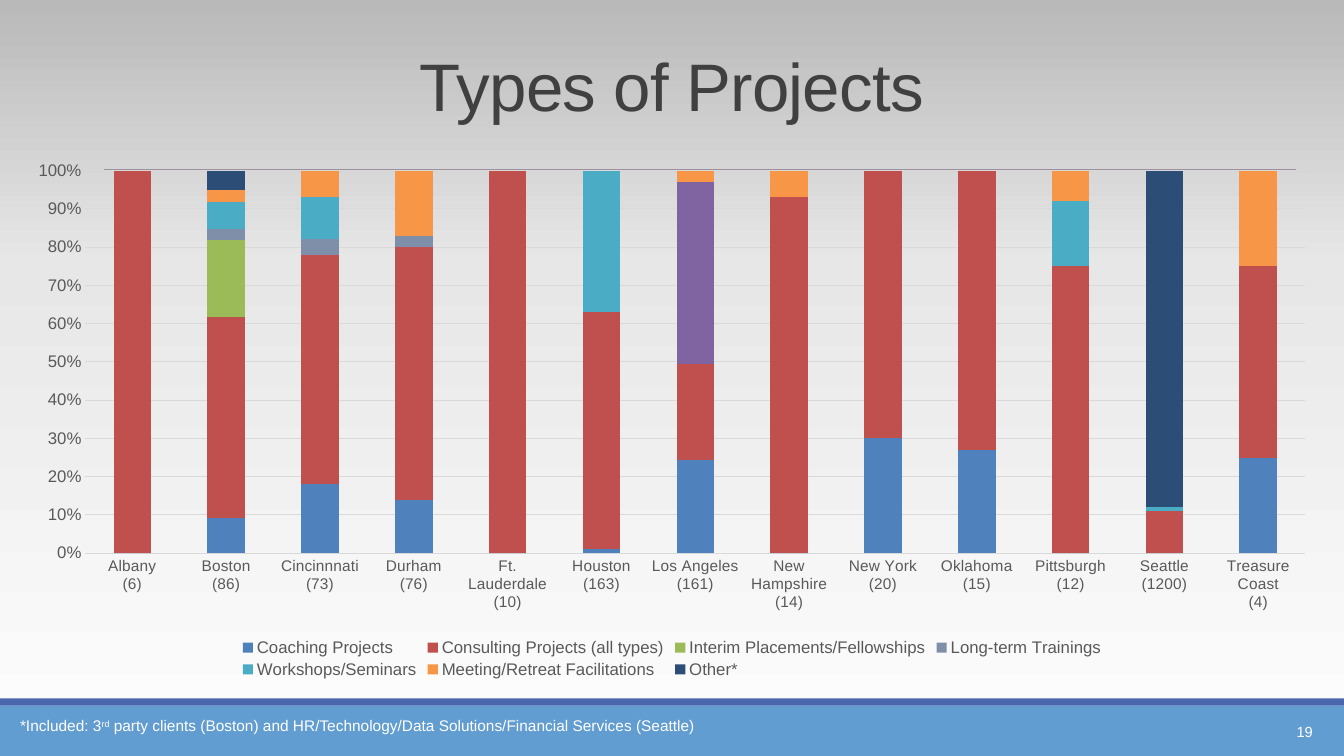
import copy
from dataclasses import dataclass

import pptx
import pptx.chart.data
import pptx.dml.color
import pptx.enum.chart
import pptx.enum.shapes
import pptx.enum.text
import pptx.oxml
import pptx.oxml.ns
import pptx.util
from pptx.util import Inches


@dataclass(frozen=True)
class Theme:
    font: str = "Arial"
    title: str = "404040"
    label: str = "595959"
    grid: str = "D9D9D9"
    top_rule: str = "9D90A0"
    band: str = "629DD1"
    band_edge: str = "4A66AC"
    on_band: str = "FFFFFF"
    backdrop: tuple = ((0, "FEFEFE"), (0.65, "E7E7E7"), (1, "B9B9B9"))
    title_size: float = 48
    axis_size: float = 12
    city_size: float = 11
    note_size: float = 11
    number_size: float = 10.5


THEME = Theme()

CITIES = [
    ("Albany", 6), ("Boston", 86), ("Cincinnnati", 73), ("Durham", 76),
    ("Ft. Lauderdale", 10), ("Houston", 163), ("Los Angeles", 161),
    ("New Hampshire", 14), ("New York", 20), ("Oklahoma", 15),
    ("Pittsburgh", 12), ("Seattle", 1200), ("Treasure Coast", 4),
]
PROJECTS = [
    ("Coaching Projects", "4F81BD", (0, 9, 18, 14, 0, 1, 24, 0, 30, 27, 0, 0, 25)),
    ("Consulting Projects (all types)", "C0504D",
     (100, 52, 60, 66, 100, 62, 25, 93, 70, 73, 75, 11, 50)),
    ("Interim Placements/Fellowships", "9BBB59", (0, 20, 0, 0, 0, 0, 0, 0, 0, 0, 0, 0, 0)),
    ("Long-term Trainings", "7F8FA9", (0, 3, 4, 3, 0, 0, 47, 0, 0, 0, 0, 0, 0)),
    ("Workshops/Seminars", "4BACC6", (0, 7, 11, 0, 0, 37, 0, 0, 0, 0, 17, 1, 0)),
    ("Meeting/Retreat Facilitations", "F79646", (0, 3, 7, 17, 0, 0, 3, 7, 0, 0, 8, 0, 25)),
    ("Other*", "2C4D75", (0, 5, 0, 0, 0, 0, 0, 0, 0, 0, 0, 88, 0)),
]
HIGHLIGHTS = {("Long-term Trainings", "Los Angeles"): "8064A2"}


def rgb(color):
    return pptx.dml.color.RGBColor.from_string(color)


def set_font(font, size, color):
    font.name = THEME.font
    font.size = pptx.util.Pt(size)
    font.color.rgb = rgb(color)


def add_run(paragraph, text, size, color):
    run = paragraph.add_run()
    run.text = text
    set_font(run.font, size, color)
    return run


def paint_backdrop(slide):
    fill = slide.background.fill
    fill.gradient()
    fill.gradient_angle = 90
    stop_list = next(slide.element.iter(pptx.oxml.ns.qn("a:gsLst")))
    stop_list.append(copy.deepcopy(stop_list[-1]))
    for stop, (position, color) in zip(fill.gradient_stops, THEME.backdrop):
        stop.position = position
        stop.color.rgb = rgb(color)


def add_title(slide, box):
    title = slide.shapes.title
    title.left, title.top, title.width, title.height = map(Inches, box)
    title.text_frame.vertical_anchor = pptx.enum.text.MSO_ANCHOR.MIDDLE
    paragraph = title.text_frame.paragraphs[0]
    paragraph.alignment = pptx.enum.text.PP_ALIGN.CENTER
    paragraph.line_spacing = 0.85
    heading = add_run(paragraph, "Types of Projects", THEME.title_size, THEME.title)
    heading.font._element.set("spc", "-50")


def add_bar(slide, box, color):
    bar = slide.shapes.add_shape(pptx.enum.shapes.MSO_SHAPE.RECTANGLE, *map(Inches, box))
    bar.shadow.inherit = False
    bar.fill.solid()
    bar.fill.fore_color.rgb = rgb(color)
    bar.line.fill.background()


def add_text_area(slide, box):
    area = slide.shapes.add_textbox(*map(Inches, box)).text_frame
    area.word_wrap = True
    return area


def add_footer(slide, box):
    left, top, width, height = box
    edge = 0.07
    add_bar(slide, (left, top + edge, width, height - edge), THEME.band)
    add_bar(slide, (left, top, width, edge), THEME.band_edge)

    note = add_text_area(slide, (left + 0.1, top + 0.13, 11.48, 0.29)).paragraphs[0]
    for text, raised in (
        ("*Included: 3", False),
        ("rd", True),
        (" party clients (Boston) and HR/Technology/Data Solutions/Financial Services (Seattle)",
         False),
    ):
        run = add_run(note, text, THEME.note_size, THEME.on_band)
        if raised:
            run.font._element.set("baseline", "30000")

    page = add_text_area(slide, (left + width - 1.64, top + 0.13, 1.43, 0.4))
    page.vertical_anchor = pptx.enum.text.MSO_ANCHOR.MIDDLE
    page.paragraphs[0].alignment = pptx.enum.text.PP_ALIGN.RIGHT
    add_run(page.paragraphs[0], "19", THEME.number_size, THEME.on_band)


def add_top_rule(slide, left, right, y):
    rule = slide.shapes.add_connector(
        pptx.enum.shapes.MSO_CONNECTOR.STRAIGHT,
        Inches(left), Inches(y), Inches(right), Inches(y))
    rule.line.color.rgb = rgb(THEME.top_rule)
    rule.line.width = pptx.util.Pt(1)
    rule._element.spPr.append(pptx.oxml.parse_xml(
        f'<a:effectLst {pptx.oxml.ns.nsdecls("a")}/>'))


def style_axes(chart):
    no_tick = pptx.enum.chart.XL_TICK_MARK.NONE
    cities, shares = chart.category_axis, chart.value_axis
    for axis, size in ((cities, THEME.city_size), (shares, THEME.axis_size)):
        axis.major_tick_mark = axis.minor_tick_mark = no_tick
        set_font(axis.tick_labels.font, size, THEME.label)
    shares.has_major_gridlines = True
    for line in (cities.format.line, shares.major_gridlines.format.line):
        line.color.rgb = rgb(THEME.grid)
        line.width = pptx.util.Pt(0.75)
    shares.format.line.fill.background()
    shares.minimum_scale, shares.maximum_scale, shares.major_unit = 0, 1, 0.1
    shares.tick_labels.number_format = "0%"
    shares.tick_labels.number_format_is_linked = False


def fix_plot_area(chart, x, y, w, h):
    """Pin the inner plot area to fractions of the chart's box."""
    plot_area = next(chart.element.iter(pptx.oxml.ns.qn("c:plotArea")))
    for layout in plot_area.findall(pptx.oxml.ns.qn("c:layout")):
        plot_area.remove(layout)
    sizes = "".join(f'<c:{tag} val="{value}"/>'
                    for tag, value in (("x", x), ("y", y), ("w", w), ("h", h)))
    plot_area.insert(0, pptx.oxml.parse_xml(
        f'<c:layout {pptx.oxml.ns.nsdecls("c")}><c:manualLayout>'
        '<c:layoutTarget val="inner"/><c:xMode val="edge"/><c:yMode val="edge"/>'
        f'{sizes}</c:manualLayout></c:layout>'))


def add_project_chart(slide, box):
    data = pptx.chart.data.CategoryChartData(number_format="0")
    data.categories = [f"{city}\n({count})" for city, count in CITIES]
    for name, _, shares in PROJECTS:
        data.add_series(name, shares)
    chart = slide.shapes.add_chart(
        pptx.enum.chart.XL_CHART_TYPE.COLUMN_STACKED_100, *map(Inches, box), data).chart
    chart.has_title = False
    set_font(chart.font, 10, "000000")

    plot = chart.plots[0]
    plot.gap_width, plot.overlap, plot.vary_by_categories = 150, 100, False
    city_names = [city for city, _ in CITIES]
    for series, (name, color, _) in zip(plot.series, PROJECTS):
        series.format.fill.solid()
        series.format.fill.fore_color.rgb = rgb(color)
        for (project, city), accent in HIGHLIGHTS.items():
            if project == name:
                fill = series.points[city_names.index(city)].format.fill
                fill.solid()
                fill.fore_color.rgb = rgb(accent)

    style_axes(chart)
    chart.has_legend = True
    chart.legend.position = pptx.enum.chart.XL_LEGEND_POSITION.BOTTOM
    chart.legend.include_in_layout = False
    set_font(chart.legend.font, THEME.axis_size, THEME.label)
    fix_plot_area(chart, 0.048, 0.033, 0.94, 0.723)


def main():
    deck = pptx.Presentation()
    deck.slide_width, deck.slide_height = Inches(13.33), Inches(7.5)
    slide = deck.slides.add_slide(deck.slide_layouts.get_by_name("Title Only"))
    paint_backdrop(slide)
    add_title(slide, (0, 0.29, 13.33, 1.22))
    add_top_rule(slide, 1.03, 12.85, 1.68)
    add_project_chart(slide, (0.23, 1.52, 12.87, 5.25))
    add_footer(slide, (0, 6.93, 13.33, 0.57))
    deck.save("out.pptx")


if __name__ == "__main__":
    main()
